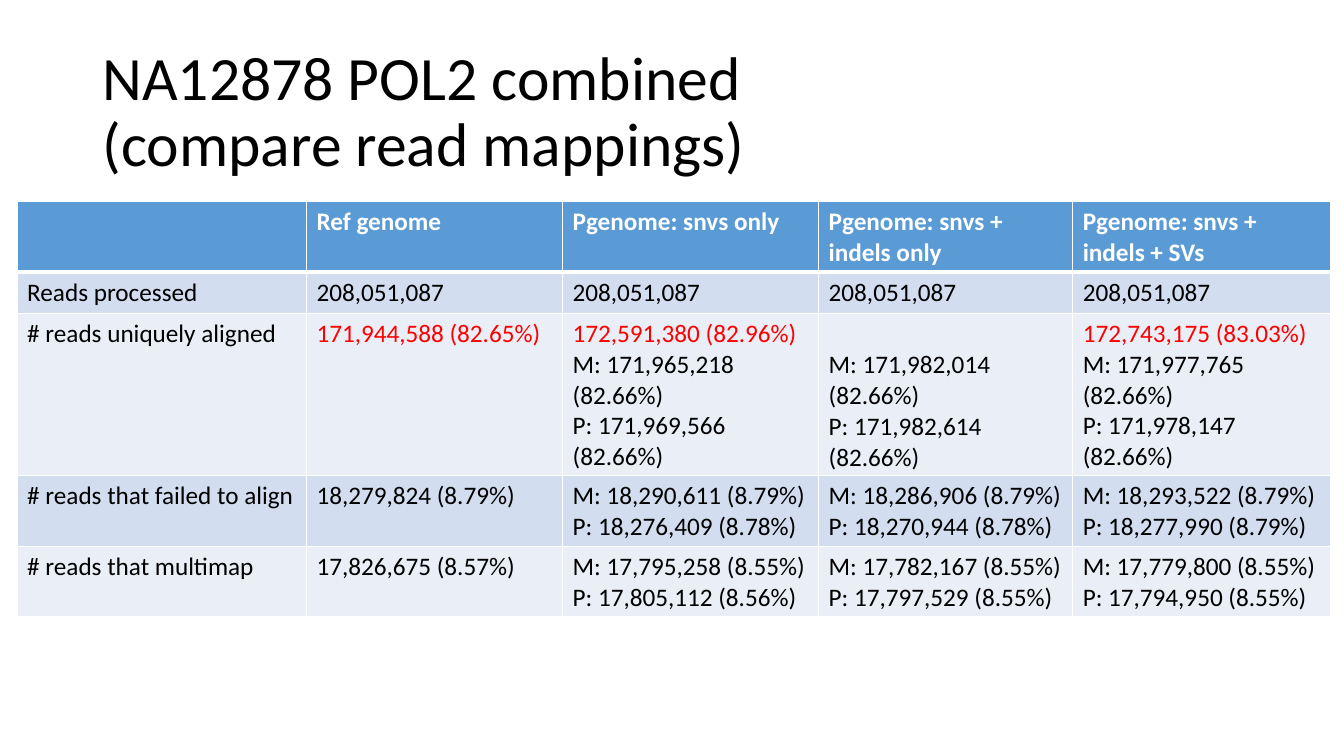
from dataclasses import dataclass

from lxml.etree import SubElement
from pptx import Presentation
from pptx.dml.color import RGBColor as RGB
from pptx.enum.text import MSO_ANCHOR as Anchor
from pptx.oxml.ns import qn
from pptx.util import Inches, Pt

FONT = "Calibri"
BLACK, WHITE, RED = "000000", "FFFFFF", "FF0000"
HEADER_FILL = "5B9BD5"
BAND_FILLS = ("D2DEEF", "EAEFF7")
COL_WIDTHS = (2.87, 2.54, 2.54, 2.52, 2.56)
ROW_HEIGHT = 0.41
LINE_HEIGHT = 0.31
TOTAL_READS = "208,051,087"


@dataclass
class Cell:
    lines: tuple[str, ...] = ()
    total: str = ""
    skipped_lines: int = 0


def both(maternal: str, paternal: str, total: str = "", skipped_lines: int = 0) -> Cell:
    return Cell((f"M: {maternal}", f"P: {paternal}"), total, skipped_lines)


HEADERS = [
    Cell(),
    Cell(("Ref genome",)),
    Cell(("Pgenome: snvs only",)),
    Cell(("Pgenome: snvs + indels only",)),
    Cell(("Pgenome: snvs + indels + SVs",)),
]
ROWS = [
    HEADERS,
    [Cell(("Reads processed",))] + [Cell((TOTAL_READS,))] * 4,
    [
        Cell(("# reads uniquely aligned",)),
        Cell(total="171,944,588 (82.65%)"),
        both("171,965,218 (82.66%)", "171,969,566 (82.66%)", "172,591,380 (82.96%)"),
        both("171,982,014 (82.66%)", "171,982,614 (82.66%)", skipped_lines=1),
        both("171,977,765 (82.66%)", "171,978,147 (82.66%)", "172,743,175 (83.03%)"),
    ],
    [
        Cell(("# reads that failed to align",)),
        Cell(("18,279,824 (8.79%)",)),
        both("18,290,611 (8.79%)", "18,276,409 (8.78%)"),
        both("18,286,906 (8.79%)", "18,270,944 (8.78%)"),
        both("18,293,522 (8.79%)", "18,277,990 (8.79%)"),
    ],
    [
        Cell(("# reads that multimap",)),
        Cell(("17,826,675 (8.57%)",)),
        both("17,795,258 (8.55%)", "17,805,112 (8.56%)"),
        both("17,782,167 (8.55%)", "17,797,529 (8.55%)"),
        both("17,779,800 (8.55%)", "17,794,950 (8.55%)"),
    ],
]


def color(value: str) -> RGB:
    return RGB.from_string(value)


def add_run(p, text: str, size: float, fill: str, bold: bool = False) -> None:
    r = p.add_run()
    r.text = text
    r.font.name = FONT
    r.font.size = Pt(size)
    r.font.bold = bold
    r.font.color.rgb = color(fill)


def add_borders(tc, row: int) -> None:
    tc_pr = tc._tc.get_or_add_tcPr()
    for side in "LRTB":
        heavy = (row, side) in ((0, "B"), (1, "T"))
        ln = SubElement(tc_pr, qn(f"a:ln{side}"), w=str(Pt(3 if heavy else 1)))
        SubElement(SubElement(ln, qn("a:solidFill")), qn("a:srgbClr"), val=WHITE)


def fill_cell(tc, cell: Cell, row: int) -> None:
    header = row == 0
    add_borders(tc, row)
    tc.fill.solid()
    tc.fill.fore_color.rgb = color(HEADER_FILL if header else BAND_FILLS[(row - 1) % 2])
    tc.margin_top = Inches(0.05 + LINE_HEIGHT * cell.skipped_lines)
    entries = [(cell.total, RED)] if cell.total else []
    entries += [(line, WHITE if header else BLACK) for line in cell.lines]
    tf = tc.text_frame
    for i, (text, fill) in enumerate(entries):
        p = tf.add_paragraph() if i else tf.paragraphs[0]
        add_run(p, text, 18, fill, header)


def add_title(s) -> None:
    sp = s.shapes.add_textbox(Inches(0.92), Inches(0.4), Inches(11.5), Inches(1.45))
    tf = sp.text_frame
    tf.word_wrap = True
    tf.vertical_anchor = Anchor.MIDDLE
    p = tf.paragraphs[0]
    p.line_spacing = 0.9
    add_run(p, "NA12878 POL2 combined", 44, BLACK)
    p.add_line_break()
    add_run(p, "(compare read mappings)", 44, BLACK)


def add_read_table(s) -> None:
    frame = s.shapes.add_table(
        len(ROWS), len(COL_WIDTHS), Inches(0.17), Inches(2), Inches(13.03), Inches(4.11)
    )
    table = frame.table
    for col, width in zip(table.columns, COL_WIDTHS):
        col.width = Inches(width)
    for i, cells in enumerate(ROWS):
        table.rows[i].height = Inches(ROW_HEIGHT)
        for j, cell in enumerate(cells):
            fill_cell(table.cell(i, j), cell, i)
    frame.height = Inches(4.11)


def main() -> None:
    prs = Presentation()
    prs.slide_width, prs.slide_height = Inches(13.33), Inches(7.5)
    s = prs.slides.add_slide(prs.slide_layouts[6])
    add_title(s)
    add_read_table(s)
    prs.save("out.pptx")


if __name__ == "__main__":
    main()
